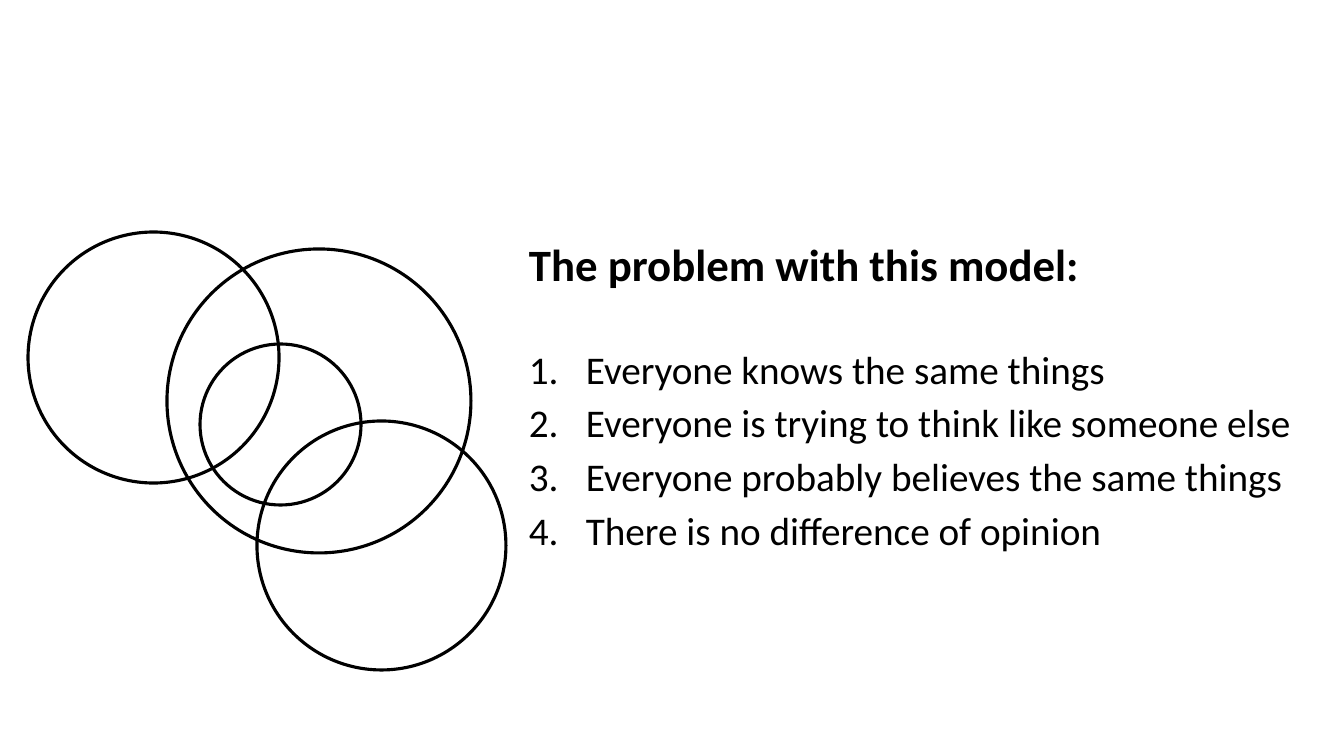
from lxml import etree
from pptx import Presentation
from pptx.dml.color import RGBColor
from pptx.enum.shapes import MSO_SHAPE
from pptx.enum.text import MSO_AUTO_SIZE
from pptx.oxml.ns import qn
from pptx.util import Emu, Pt

OVAL = MSO_SHAPE.OVAL
GROW = MSO_AUTO_SIZE.SHAPE_TO_FIT_TEXT

HEADING = "The problem with this model:"
PROBLEMS = [
    "Everyone knows the same things",
    "Everyone is trying to think like someone else",
    "Everyone probably believes the same things",
    "There is no difference of opinion",
]
TEXT_BOX = (519, 232, 796, 359)
CIRCLES = [
    (167, 249, 304),
    (28, 232, 251),
    (200, 344, 161),
    (257, 421, 249),
]
NUMBER_INDENT = 57


class Theme:
    ink = RGBColor(0, 0, 0)
    font = "Calibri"
    heading_size = Pt(32)
    item_size = Pt(28)
    heading_gap = Pt(34)
    item_spacing = 1.14
    outline = Pt(2.25)


def px(length):
    return Emu(round(length * 914400 / 100.8))


def style(paragraph, size, bold):
    font = paragraph.font
    font.name = Theme.font
    font.size = size
    font.bold = bold
    font.color.rgb = Theme.ink


def number(paragraph):
    properties = paragraph._p.get_or_add_pPr()
    properties.set("marL", str(px(NUMBER_INDENT)))
    properties.set("indent", str(-px(NUMBER_INDENT)))
    etree.SubElement(properties, qn("a:buFont"), typeface="+mj-lt")
    etree.SubElement(properties, qn("a:buAutoNum"), type="arabicPeriod")


def add_problems(slide):
    frame = slide.shapes.add_textbox(*map(px, TEXT_BOX)).text_frame
    frame.word_wrap = True
    frame.auto_size = GROW
    heading = frame.paragraphs[0]
    heading.text = HEADING
    heading.space_after = Theme.heading_gap
    style(heading, Theme.heading_size, True)
    for problem in PROBLEMS:
        paragraph = frame.add_paragraph()
        paragraph.text = problem
        number(paragraph)
        paragraph.line_spacing = Theme.item_spacing
        style(paragraph, Theme.item_size, False)


def add_circle(slide, left, top, diameter):
    shape = slide.shapes.add_shape(OVAL, *map(px, (left, top, diameter, diameter)))
    shape.shadow.inherit = False
    shape.fill.background()
    shape.line.color.rgb = Theme.ink
    shape.line.width = Theme.outline


def main():
    presentation = Presentation()
    presentation.slide_width = px(1344)
    presentation.slide_height = px(756)
    slide = presentation.slides.add_slide(presentation.slide_layouts[6])
    add_problems(slide)
    for circle in CIRCLES:
        add_circle(slide, *circle)
    presentation.save("out.pptx")


if __name__ == "__main__":
    main()
